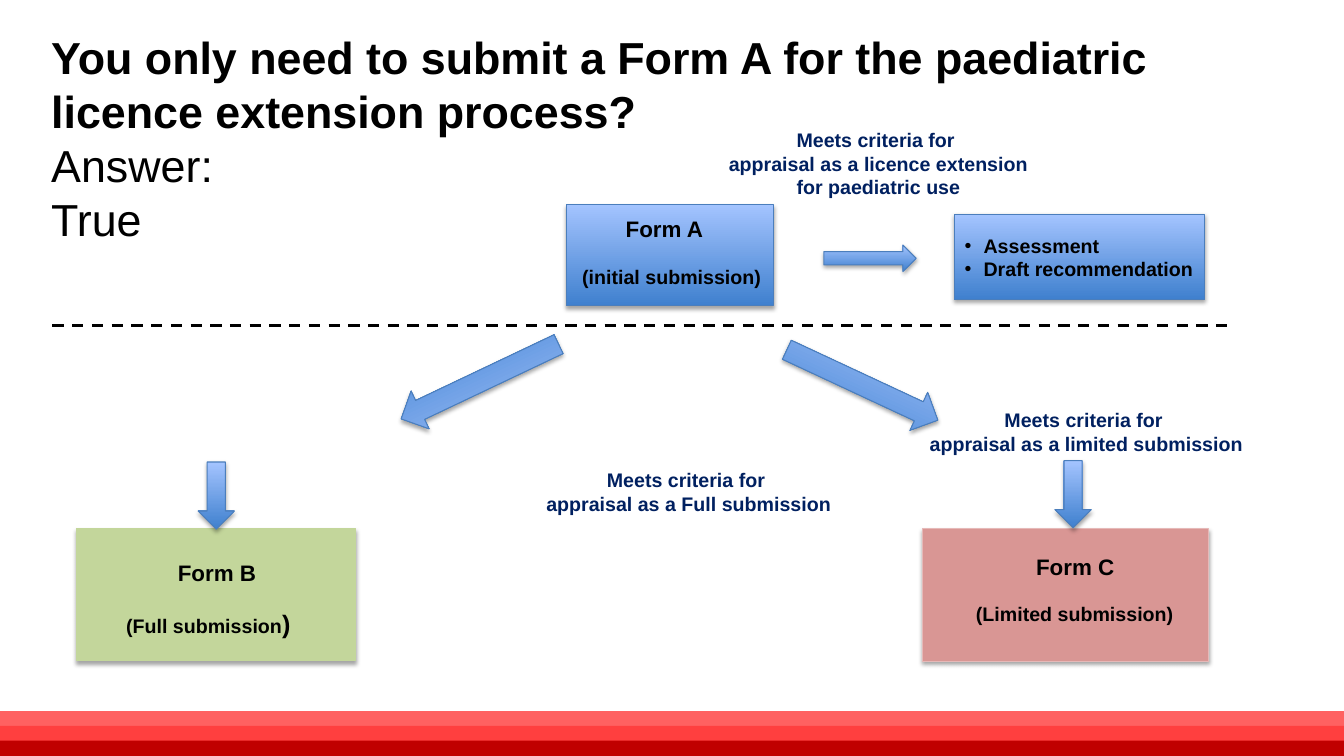
from lxml.etree import SubElement
from pptx import Presentation
from pptx.dml.color import RGBColor
from pptx.enum.dml import MSO_LINE
from pptx.enum.shapes import MSO_CONNECTOR, MSO_SHAPE
from pptx.enum.text import PP_ALIGN
from pptx.oxml.ns import qn
from pptx.util import Pt

BLACK = RGBColor(0x00, 0x00, 0x00)
NAVY = RGBColor(0x00, 0x20, 0x60)
BLUE_DARK = RGBColor(0x3F, 0x80, 0xCE)
BLUE_LIGHT = RGBColor(0xA4, 0xC4, 0xFF)
BLUE_LINE = RGBColor(0x4B, 0x7E, 0xBC)
GREEN = RGBColor(0xC3, 0xD6, 0x9B)
ROSE = RGBColor(0xD9, 0x96, 0x94)
ROSE_LINE = RGBColor(0xE6, 0xB9, 0xB8)
BANDS = [RGBColor(0xFF, 0x61, 0x61), RGBColor(0xFF, 0x3F, 0x3F), RGBColor(0xC0, 0x00, 0x00)]

prs = Presentation()
prs.slide_width, prs.slide_height = Pt(960), Pt(540)
s = prs.slides.add_slide(prs.slide_layouts[6])


def add_block(kind, x, y, w, h, fill=None, line=BLUE_LINE, rotation=0):
    sp = s.shapes.add_shape(kind, Pt(x), Pt(y), Pt(w), Pt(h))
    sp.rotation = rotation
    if fill is None:
        sp.fill.gradient()
        sp.fill.gradient_angle = 90
        for stop, color in zip(sp.fill.gradient_stops, (BLUE_DARK, BLUE_LIGHT)):
            stop.color.rgb = color
    else:
        sp.fill.solid()
        sp.fill.fore_color.rgb = fill
    sp.line.color.rgb = line
    sp.line.width = Pt(0.75)
    sp.shadow.inherit = False
    effects = sp._element.spPr.find(qn("a:effectLst"))
    shadow = SubElement(effects, qn("a:outerShdw"), blurRad=str(Pt(3.1)), dist=str(Pt(1.8)),
                        dir="5400000", rotWithShape="0")
    color = SubElement(shadow, qn("a:srgbClr"), val="000000")
    SubElement(color, qn("a:alpha"), val="35000")


def add_text(x, y, w, h, paragraphs, color=BLACK, align=PP_ALIGN.LEFT):
    sp = s.shapes.add_textbox(Pt(x), Pt(y), Pt(w), Pt(h))
    tf = sp.text_frame
    tf.word_wrap = True
    for i, runs in enumerate(paragraphs):
        p = tf.paragraphs[0] if i == 0 else tf.add_paragraph()
        p.alignment = align
        for text, size, bold in runs:
            r = p.add_run()
            r.text = text
            r.font.name = "Arial"
            r.font.size = Pt(size)
            r.font.bold = bold
            r.font.color.rgb = color
    return tf.paragraphs


for i, color in enumerate(BANDS):
    band = s.shapes.add_shape(MSO_SHAPE.RECTANGLE, 0, Pt(508 + 10.5 * i), prs.slide_width, Pt(11))
    band.fill.solid()
    band.fill.fore_color.rgb = color
    band.line.fill.background()
    band.shadow.inherit = False

title = add_text(29.5, 17.5, 883.5, 129.5, [
    [("You only need to submit a Form A for the paediatric licence extension process?", 32, True)],
    [("Answer:", 32, False)],
    [("True", 32, False)],
])
for p in title:
    p.line_spacing = Pt(38.6)

add_block(MSO_SHAPE.RECTANGLE, 404.5, 146, 148, 72.5)
add_block(MSO_SHAPE.RECTANGLE, 681.5, 153, 179, 61)
add_block(MSO_SHAPE.RECTANGLE, 54.5, 377.5, 199.5, 94.5, GREEN, GREEN)
add_block(MSO_SHAPE.RECTANGLE, 659, 377.5, 204, 95, ROSE, ROSE_LINE)

add_block(MSO_SHAPE.RIGHT_ARROW, 588.5, 175, 66, 19)
add_block(MSO_SHAPE.RIGHT_ARROW, 556.5, 260, 119, 30, rotation=25)
add_block(MSO_SHAPE.RIGHT_ARROW, 280.5, 257.5, 124.5, 30, rotation=154.6)
add_block(MSO_SHAPE.DOWN_ARROW, 753.5, 329, 26, 48)
add_block(MSO_SHAPE.DOWN_ARROW, 141.5, 330, 26, 48)

forms = [
    (401, 150.5, 151, 60.5, "Form A ", [("(initial submission)", 14, True)], 7.8),
    (83, 396, 144, 65.5, "Form B", [("(Full submission", 14, True), (")", 18, True)], 0),
    (690, 391.5, 156, 60.5, "Form C", [("(Limited submission)", 14, True)], 0),
]
for x, y, w, h, name, detail, indent in forms:
    heading, note = add_text(x, y, w, h, [[(name, 16, True)], detail])
    heading.alignment = PP_ALIGN.CENTER
    heading.space_after = Pt(16)
    note._p.get_or_add_pPr().set("marL", str(Pt(indent)))

outcomes = add_text(682, 163.5, 198, 41, [
    [("Assessment", 14, True)],
    [("Draft recommendation", 14, True)],
])
for p in outcomes:
    pPr = p._p.get_or_add_pPr()
    pPr.set("marL", str(Pt(13.5)))
    pPr.set("indent", str(-Pt(13.5)))
    SubElement(pPr, qn("a:buFont"), typeface="Arial")
    SubElement(pPr, qn("a:buChar"), char="•")

criteria = [
    (512, 88, 231, 58.5, "appraisal as a licence extension for paediatric use"),
    (331, 331, 322, 41, "appraisal as a Full submission"),
    (615, 288, 322, 41, "appraisal as a limited submission"),
]
for x, y, w, h, route in criteria:
    add_text(x, y, w, h, [[("Meets criteria for ", 14, True)], [(route, 14, True)]],
             NAVY, PP_ALIGN.CENTER)

divider = s.shapes.add_connector(MSO_CONNECTOR.STRAIGHT, Pt(37.5), Pt(232.5), Pt(880), Pt(232.5))
divider.line.color.rgb = BLACK
divider.line.width = Pt(2)
divider.line.dash_style = MSO_LINE.DASH
SubElement(divider._element.spPr, qn("a:effectLst"))

prs.save("out.pptx")
